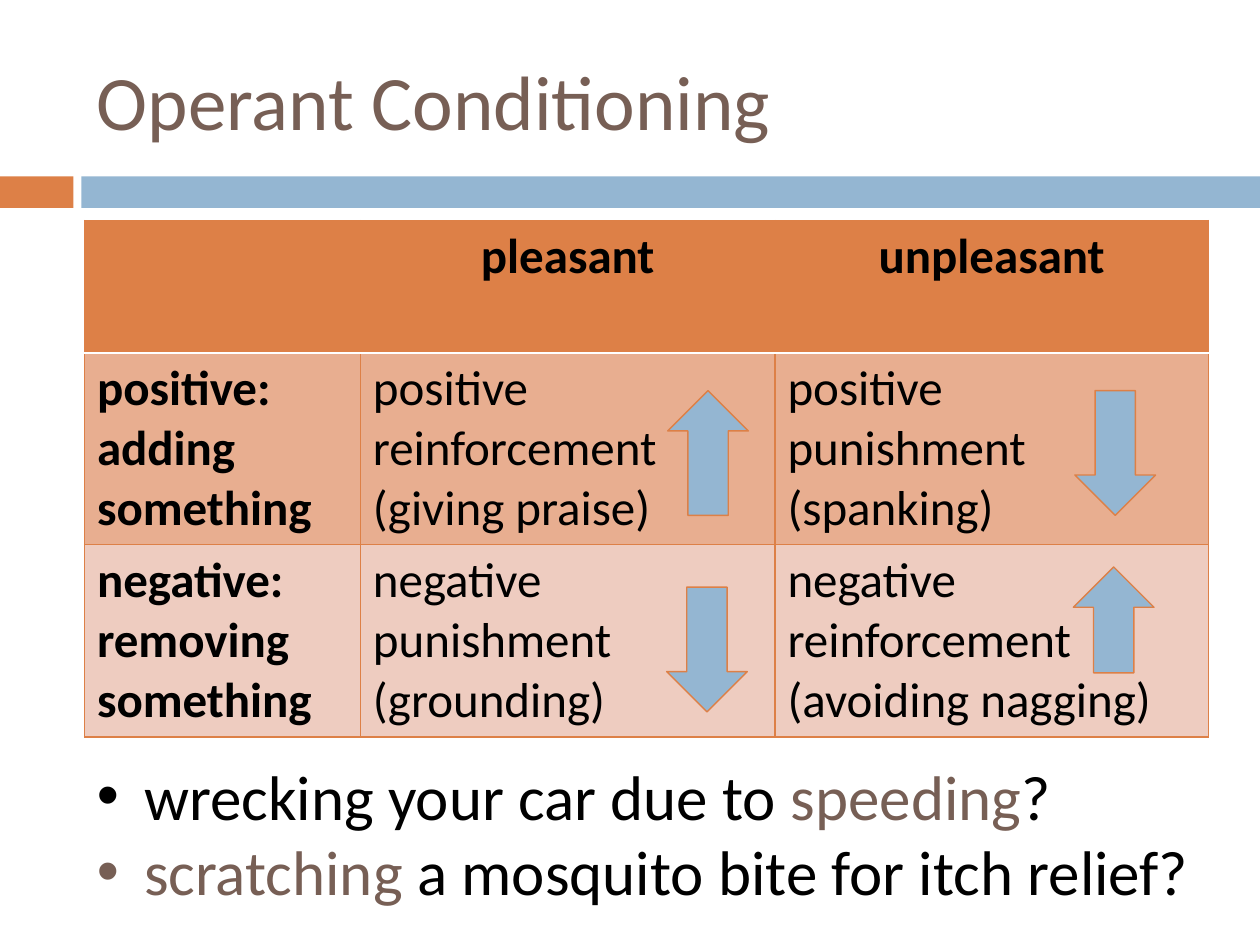
from pptx import Presentation
from pptx import util as u
from pptx.dml.color import RGBColor
from pptx.enum import shapes, text
from pptx.oxml import ns
from lxml import etree

ORANGE = RGBColor(0xDD, 0x80, 0x47)
MID_ORANGE = RGBColor(0xE8, 0xAE, 0x90)
PALE_ORANGE = RGBColor(0xEE, 0xCC, 0xC0)
BLUE = RGBColor(0x94, 0xB6, 0xD2)
BROWN = RGBColor(0x77, 0x5F, 0x55)
BLACK = RGBColor(0, 0, 0)
WHITE = RGBColor(0xFF, 0xFF, 0xFF)

LEFT, WIDTH = 48.24, 642.3
COLUMNS = (157.7, 236.9, 247.7)
ROWS = (75.6, 109.8, 109.8)
ROW_FILLS = (ORANGE, MID_ORANGE, PALE_ORANGE)
CELLS = (
    ((), ("pleasant",), ("unpleasant",)),
    (("positive:", "adding something"),
     ("positive reinforcement", "(giving praise)"),
     ("positive", "punishment", "(spanking)")),
    (("negative: removing something",),
     ("negative punishment", "(grounding)"),
     ("negative reinforcement", "(avoiding nagging)")),
)
ARROWS = (
    (381.6, 223.2, 71.3, 0),
    (613.4, 324, 60.5, 0),
    (614.2, 223.2, 71.3, 180),
    (380.9, 335.5, 71.3, 180),
)
QUESTIONS = (
    (("wrecking your car due to ", BLACK), ("speeding", BROWN), ("?", BLACK)),
    (("scratching", BROWN), (" a mosquito bite for itch relief?", BLACK)),
)


def points(*values):
    return [u.Pt(value) for value in values]


def add_span(para, words, size, color, bold=False):
    span = para.add_run()
    span.text = words
    span.font.name = "Calibri"
    span.font.size = u.Pt(size)
    span.font.bold = bold
    span.font.color.rgb = color


def next_para(frame, index):
    return frame.paragraphs[0] if index == 0 else frame.add_paragraph()


def add_filled(page, kind, place, color):
    shape = page.shapes.add_shape(kind, *points(*place))
    shape.shadow.inherit = False
    shape.fill.solid()
    shape.fill.fore_color.rgb = color
    shape.line.fill.background()
    return shape


def add_arrow(page, left, top, height, rotation):
    arrow = add_filled(page, shapes.MSO_SHAPE.UP_ARROW, (left, top, 46.1, height), BLUE)
    arrow.rotation = rotation
    arrow.line.color.rgb = ORANGE
    arrow.line.width = u.Pt(0.79)


def add_text_box(page, top, height, anchor):
    box = page.shapes.add_textbox(*points(LEFT, top, WIDTH, height))
    box.text_frame.word_wrap = True
    box.text_frame.vertical_anchor = anchor
    return box.text_frame


def add_border(cell, side, color, width):
    properties = cell._tc.get_or_add_tcPr()
    line = etree.SubElement(properties, ns.qn(f"a:ln{side}"), w=str(u.Pt(width)))
    fill = etree.SubElement(line, ns.qn("a:solidFill"))
    etree.SubElement(fill, ns.qn("a:srgbClr"), val=str(color))


def fill_cell(cell, row, column):
    for side in "LRTB":
        under_header = (row, side) in ((0, "B"), (1, "T"))
        color, width = (WHITE, 1.5) if under_header else (ORANGE, 0.79)
        add_border(cell, side, color, width)
    cell.fill.solid()
    cell.fill.fore_color.rgb = ROW_FILLS[row]
    for index, words in enumerate(CELLS[row][column]):
        para = next_para(cell.text_frame, index)
        if row == 0:
            para.alignment = text.PP_ALIGN.CENTER
        add_span(para, words, 28, BLACK, row == 0 or column == 0)


def add_conditioning_table(page):
    place = points(LEFT, 126, WIDTH, sum(ROWS))
    table = page.shapes.add_table(len(ROWS), len(COLUMNS), *place).table
    table.horz_banding = False
    for column, width in enumerate(COLUMNS):
        table.columns[column].width = u.Pt(width)
    for row, height in enumerate(ROWS):
        table.rows[row].height = u.Pt(height)
        for column in range(len(COLUMNS)):
            fill_cell(table.cell(row, column), row, column)


def add_questions(page):
    frame = add_text_box(page, 429.1, 94.3, text.MSO_ANCHOR.TOP)
    for index, spans in enumerate(QUESTIONS):
        para = next_para(frame, index)
        properties = para._p.get_or_add_pPr()
        properties.set("marL", str(u.Pt(27)))
        properties.set("indent", str(u.Pt(-27)))
        etree.SubElement(properties, ns.qn("a:buFont"), typeface="Arial")
        etree.SubElement(properties, ns.qn("a:buChar"), char="•")
        for words, color in spans:
            add_span(para, words, 36, color)


def main():
    deck = Presentation()
    deck.slide_width, deck.slide_height = points(720, 540)
    page = deck.slides.add_slide(deck.slide_layouts[6])
    add_filled(page, shapes.MSO_SHAPE.RECTANGLE, (0, 100.8, 42, 18), ORANGE)
    add_filled(page, shapes.MSO_SHAPE.RECTANGLE, (46.5, 100.8, 673.5, 18), BLUE)
    title = add_text_box(page, 18, 78, text.MSO_ANCHOR.MIDDLE)
    add_span(title.paragraphs[0], "Operant Conditioning", 44, BROWN)
    add_conditioning_table(page)
    for arrow in ARROWS:
        add_arrow(page, *arrow)
    add_questions(page)
    deck.save("out.pptx")


if __name__ == "__main__":
    main()
